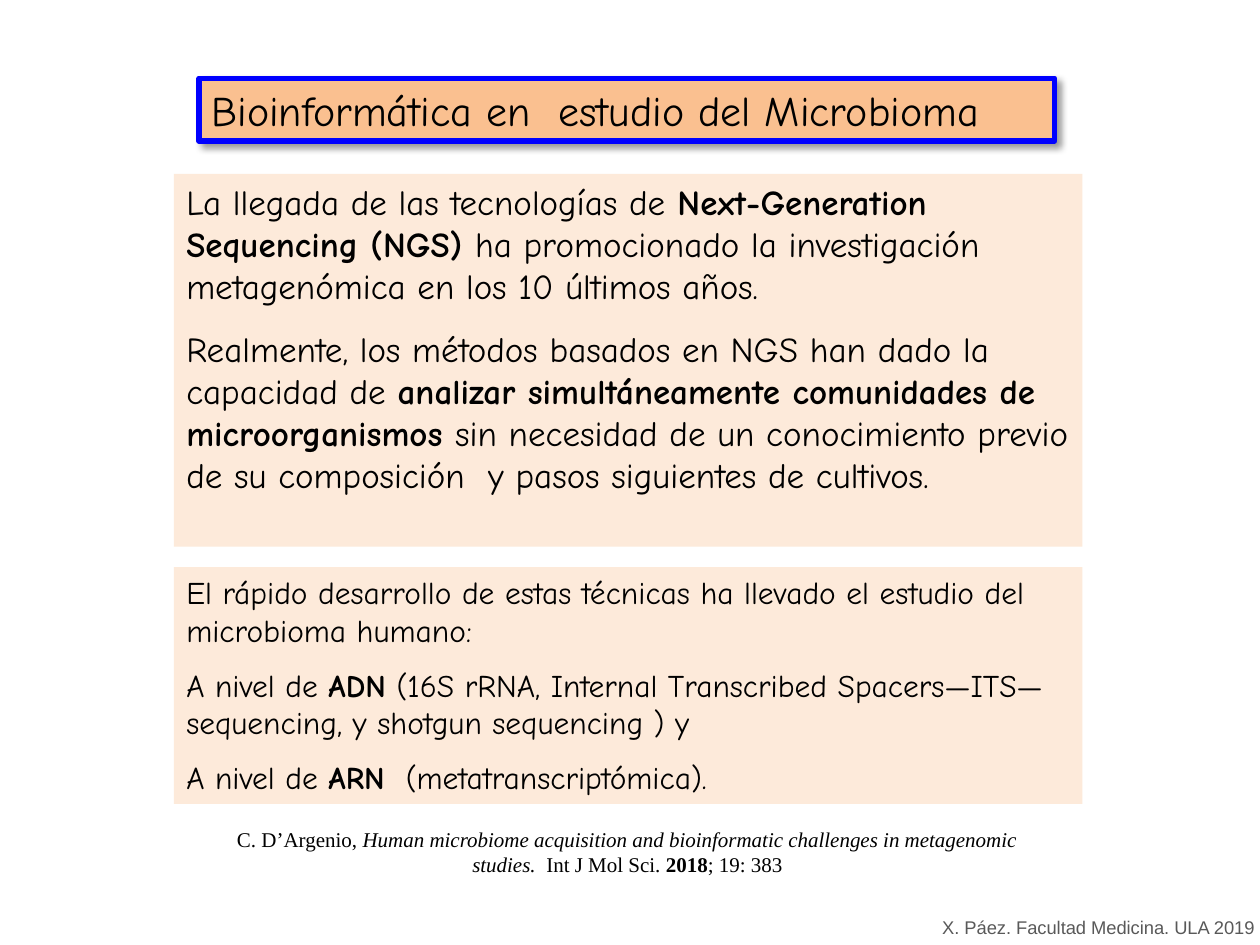
from lxml import etree
from pptx import Presentation
from pptx.dml.color import RGBColor
from pptx.enum.shapes import MSO_SHAPE
from pptx.enum.text import MSO_ANCHOR, MSO_AUTO_SIZE, PP_ALIGN
from pptx.oxml import parse_xml
from pptx.util import Inches, Pt

RECTANGLE = MSO_SHAPE.RECTANGLE
TOP, MIDDLE = MSO_ANCHOR.TOP, MSO_ANCHOR.MIDDLE
NO_AUTOFIT = MSO_AUTO_SIZE.NONE
LEFT, CENTER = PP_ALIGN.LEFT, PP_ALIGN.CENTER

COLORS = {"text": "000000", "footer": "595959", "panel": "FDEADA",
          "title": "FAC090", "border": "0000FF"}
HAND, SERIF, SANS = "Comic Neue", "Times New Roman", "Arial"

# A paragraph is a list of (text, style); style is "", "bold" or "italic".
TITLE = [[("Bioinformática en  estudio del Microbioma", "")]]
PANELS = [
    {"top": 1.38, "height": 2.96, "size": 20, "gap": 12, "paragraphs": [
        [("La llegada de las tecnologías de ", ""),
         ("Next-Generation Sequencing (NGS) ", "bold"),
         ("ha promocionado la investigación metagenómica en los 10 últimos años.", "")],
        [("Realmente, los métodos basados en NGS han dado la capacidad de ", ""),
         ("analizar simultáneamente comunidades de microorganismos ", "bold"),
         ("sin necesidad de un conocimiento previo de su composición  y pasos "
          "siguientes de cultivos.", "")],
    ]},
    {"top": 4.5, "height": 1.88, "size": 18, "gap": 9.6, "paragraphs": [
        [("El rápido desarrollo de estas técnicas ha llevado el estudio del "
          "microbioma humano:", "")],
        [("A nivel de ", ""), ("ADN", "bold"),
         (" (16S rRNA, Internal Transcribed Spacers—ITS—sequencing, y shotgun "
          "sequencing ) y", "")],
        [("A nivel de ", ""), ("ARN", "bold"), ("  (metatranscriptómica).", "")],
    ]},
]
CITATION = [[
    ("C. D’Argenio, ", ""),
    ("Human microbiome acquisition and bioinformatic challenges in metagenomic studies.  ",
     "italic"),
    ("Int J Mol Sci. ", ""), ("2018", "bold"), ("; 19: 383", ""),
]]
FOOTER = [[("X. Páez. Facultad Medicina. ULA 2019", "")]]

SHADOW = """<a:effectLst xmlns:a="http://schemas.openxmlformats.org/drawingml/2006/main">
  <a:outerShdw blurRad="50800" dist="38100" dir="2700000" algn="tl" rotWithShape="0">
    <a:srgbClr val="000000"><a:alpha val="40000"/></a:srgbClr>
  </a:outerShdw>
</a:effectLst>"""


def color(name):
    return RGBColor.from_string(COLORS[name])


def fill_shape(shape, name):
    shape.fill.solid()
    shape.fill.fore_color.rgb = color(name)


def write(box, paragraphs, font, size, ink="text", align=LEFT, anchor=TOP, gap=0):
    """Fill a box with styled paragraphs, separated by gap points."""
    frame = box.text_frame
    frame.word_wrap = True
    frame.auto_size = NO_AUTOFIT
    frame.vertical_anchor = anchor
    for index, spans in enumerate(paragraphs):
        para = frame.add_paragraph() if index else frame.paragraphs[0]
        para.alignment = align
        para.space_before = Pt(gap if index else 0)
        for text, style in spans:
            span = para.add_run()
            span.text = text
            span.font.name = font
            span.font.size = Pt(size)
            span.font.color.rgb = color(ink)
            span.font.bold = style == "bold"
            span.font.italic = style == "italic"


def add_title(page):
    title = page.shapes.title
    title.left, title.top = Inches(1.58), Inches(0.62)
    title.width, title.height = Inches(6.79), Inches(0.5)
    fill_shape(title, "title")
    title.line.color.rgb = color("border")
    title.line.width = Pt(3)
    title.element.spPr.append(parse_xml(SHADOW))
    write(title, TITLE, HAND, 24, anchor=MIDDLE)


def add_panel(page, panel):
    box = page.shapes.add_shape(RECTANGLE, Inches(1.38), Inches(panel["top"]),
                                Inches(7.21), Inches(panel["height"]))
    box.shadow.inherit = False
    fill_shape(box, "panel")
    box.line.fill.background()
    write(box, panel["paragraphs"], HAND, panel["size"], gap=panel["gap"])


def add_text(page, left, top, width, height):
    return page.shapes.add_textbox(Inches(left), Inches(top), Inches(width), Inches(height))


def main():
    deck = Presentation()
    deck.slide_width, deck.slide_height = Inches(10), Inches(7.5)
    page = deck.slides.add_slide(deck.slide_layouts.get_by_name("Title Only"))
    add_title(page)
    for panel in PANELS:
        add_panel(page, panel)
    write(add_text(page, 1.71, 6.51, 6.54, 0.5), CITATION, SERIF, 12, align=CENTER)
    write(add_text(page, 7.38, 7.22, 2.74, 0.28), FOOTER, SANS, 10.5, ink="footer")
    deck.save("out.pptx")


if __name__ == "__main__":
    main()
